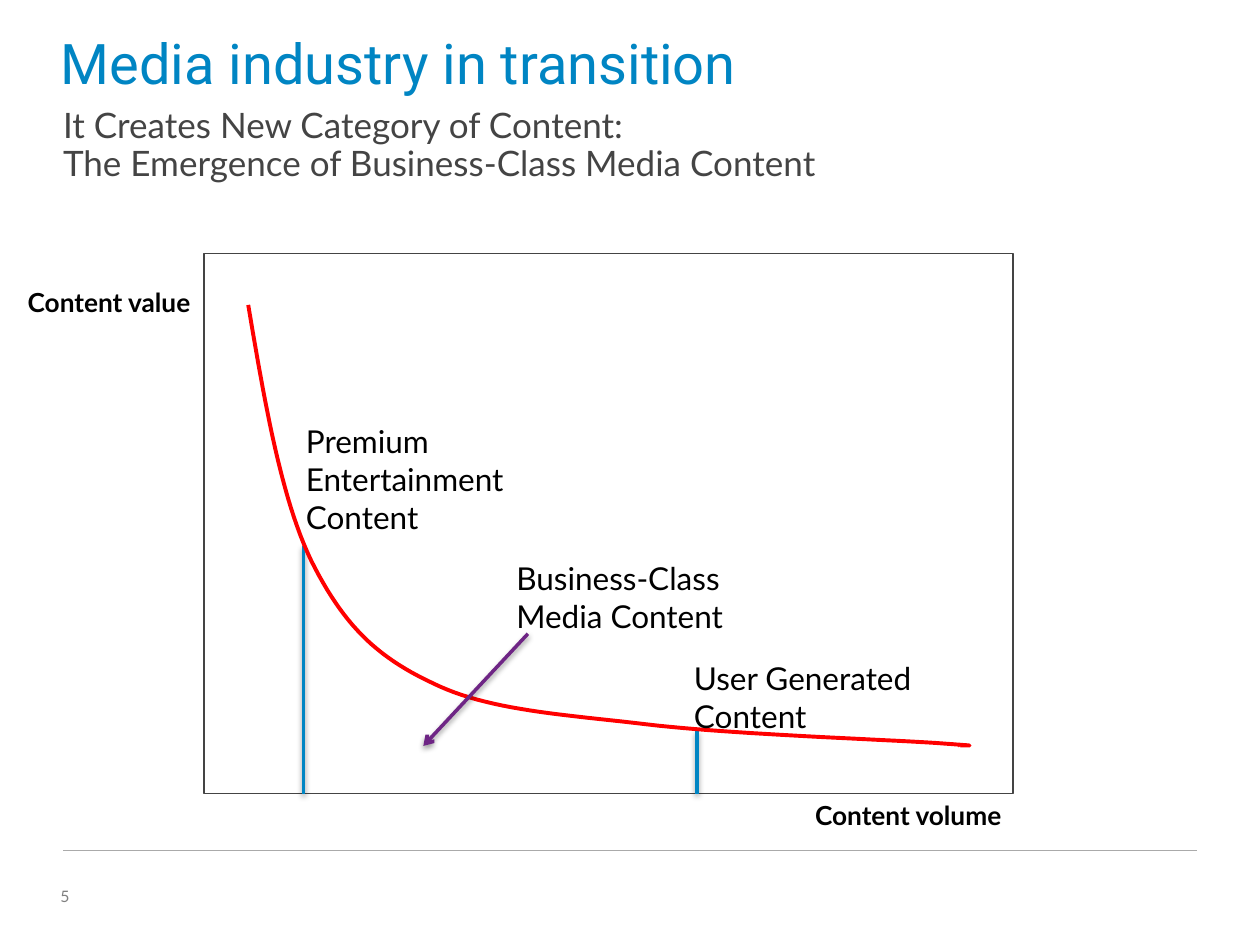
from dataclasses import dataclass

from lxml.etree import SubElement
from pptx import Presentation
from pptx.dml.color import RGBColor as Color
from pptx.enum.shapes import MSO_CONNECTOR as Connector, MSO_SHAPE as Shape
from pptx.enum.text import MSO_ANCHOR as Anchor, PP_ALIGN as Align
from pptx.oxml.ns import qn
from pptx.util import Pt

EMU_PER_PX = 9144  # 100 px to the inch


@dataclass(frozen=True)
class Theme:
    heading: str = "Roboto"
    body: str = "Lato"
    accent: str = "0085C3"
    curve: str = "FF0000"
    arrow: str = "6E2585"
    dark: str = "444444"
    text: str = "000000"
    grey: str = "808080"
    rule: str = "AAAAAA"
    paper: str = "FFFFFF"
    title_size: int = 32
    subtitle_size: int = 20
    label_size: int = 18
    axis_size: int = 15
    number_size: int = 9


THEME = Theme()


def px(length):
    return round(length * EMU_PER_PX)


def place(shape, box):
    for name, length in zip(("left", "top", "width", "height"), box):
        setattr(shape, name, px(length))


def write(shape, text, size, color, font=THEME.body, bold=False, align=Align.LEFT,
          spacing=None, anchor=Anchor.TOP, inset=(0, 0), bullet=True):
    """Fill a text shape with one formatted paragraph."""
    side, edge = map(px, inset)
    frame = shape.text_frame
    frame_format = {"word_wrap": True, "vertical_anchor": anchor, "margin_left": side,
                    "margin_right": side, "margin_top": edge, "margin_bottom": edge}
    for name, value in frame_format.items():
        setattr(frame, name, value)
    para = frame.paragraphs[0]
    para.text = text
    para_format = {"alignment": align, "line_spacing": spacing, "space_before": Pt(0)}
    for name, value in para_format.items():
        setattr(para, name, value)
    if not bullet:
        properties = para._p.get_or_add_pPr()
        properties.set("marL", "0")
        properties.set("indent", "0")
        SubElement(properties, qn("a:buNone"))
    for span in para.runs:
        font_format = {"name": font, "size": Pt(size), "bold": bold}
        for name, value in font_format.items():
            setattr(span.font, name, value)
        span.font.color.rgb = Color.from_string(color)


def add_text(page, box, text, size, color, **options):
    shape = page.shapes.add_textbox(*map(px, box))
    write(shape, text, size, color, **options)


def set_line(shape, color, weight):
    shape.line.color.rgb = Color.from_string(color)
    shape.line.width = Pt(weight)


def add_line(page, start, end, color, weight, shadow=False, arrow=False):
    line = page.shapes.add_connector(Connector.STRAIGHT, *map(px, (*start, *end)))
    set_line(line, color, weight)
    if arrow:
        SubElement(line.line._get_or_add_ln(), qn("a:tailEnd"), type="arrow")
    effects = SubElement(line._element.spPr, qn("a:effectLst"))
    if shadow:
        outer = SubElement(effects, qn("a:outerShdw"), blurRad="40000", dist="20000",
                           dir="5400000", rotWithShape="0")
        tint = SubElement(outer, qn("a:srgbClr"), val="000000")
        SubElement(tint, qn("a:alpha"), val="38000")


def bezier_points(start, segments, steps=24):
    """Sample a chain of cubic curves."""
    points = [start]
    for first, second, end in segments:
        for step in range(1, steps + 1):
            t = step / steps
            weights = ((1 - t) ** 3, 3 * t * (1 - t) ** 2, 3 * t * t * (1 - t), t ** 3)
            corners = (start, first, second, end)
            points.append(tuple(sum(w * c[axis] for w, c in zip(weights, corners))
                                for axis in (0, 1)))
        start = end
    return points


def add_heading(page, box):
    left, top, width = box
    title, body = page.shapes.title, page.placeholders[1]
    place(title, (left - 2, top, width + 2, 48))
    write(title, "Media industry in transition", THEME.title_size, THEME.accent,
          font=THEME.heading, spacing=0.9)
    place(body, (left, top + 57, width, 61))
    write(body, "It Creates New Category of Content:\v"
          "The Emergence of Business-Class Media Content",
          THEME.subtitle_size, THEME.dark, spacing=0.9, bullet=False)


def add_value_curve(page, box):
    left, top, width, height = box

    def at(x, y):
        return left + x, top + y

    # Frame
    frame = page.shapes.add_shape(Shape.RECTANGLE, *map(px, box))
    frame.shadow.inherit = False
    frame.fill.solid()
    frame.fill.fore_color.rgb = Color.from_string(THEME.paper)
    set_line(frame, THEME.dark, 0.75)

    # Category borders, from the curve down to the axis
    for x, y in ((79, 232), (391, 379)):
        add_line(page, at(x, y), at(x, height), THEME.accent, 2, shadow=True)

    # Long-tail curve
    segments = (
        ((48, 118), (61, 194), (85, 244)),
        ((110, 294), (136, 320), (181, 341)),
        ((225, 363), (285, 366), (352, 374)),
        ((419, 382), (544, 386), (585, 389)),
        ((626, 392), (598, 390), (600, 391)),
    )
    points = [tuple(map(px, at(*point))) for point in bezier_points((35, 41), segments)]
    builder = page.shapes.build_freeform(*points[0])
    builder.add_line_segments(points[1:], close=False)
    curve = builder.convert_to_shape()
    curve.shadow.inherit = False
    curve.fill.background()
    set_line(curve, THEME.curve, 2.25)

    # Category labels
    labels = (
        ("Premium\vEntertainment Content", 71, 129, 194, 101),
        ("Business-Class Media Content", 238, 238, 246, 71),
        ("User Generated Content", 379, 317, 260, 71),
    )
    for text, x, y, *size in labels:
        add_text(page, (*at(x, y), *size), text, THEME.label_size, THEME.text,
                 inset=(10, 5))
    add_line(page, at(257, 302), at(174, 391), THEME.arrow, 2, shadow=True, arrow=True)

    # Axis names
    axes = (
        ("Content value", (0, top + 21, left - 1, 35), Align.RIGHT),
        ("Content volume", (*at(475, height - 1), 222, 35), Align.LEFT),
    )
    for text, area, align in axes:
        add_text(page, area, text, THEME.axis_size, THEME.text, bold=True,
                 align=align, inset=(10, 5))


def add_footer(page, box):
    left, top, width = box
    add_line(page, (left, top), (left + width, top), THEME.rule, 0.75)
    add_text(page, (left - 2, top + 31, 29, 13), "5", THEME.number_size, THEME.grey,
             spacing=0.9, anchor=Anchor.MIDDLE)


def main():
    deck = Presentation()
    deck.slide_width, deck.slide_height = px(1000), px(750)
    page = deck.slides.add_slide(deck.slide_layouts[1])
    add_heading(page, (50, 29, 900))
    add_value_curve(page, (162, 201, 642, 429))
    add_footer(page, (50, 675, 900))
    deck.save("out.pptx")


if __name__ == "__main__":
    main()
